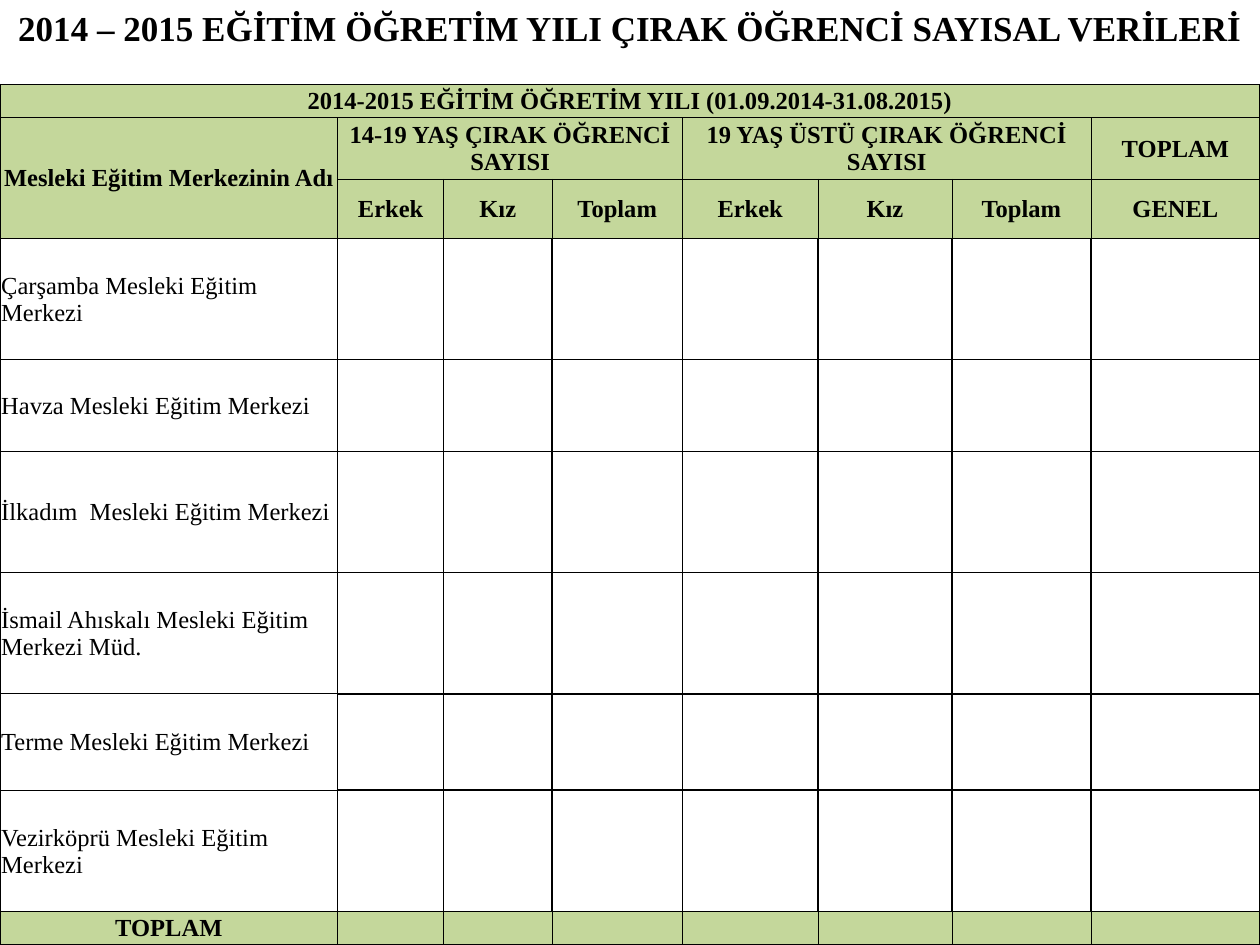
from lxml import etree
from pptx import Presentation
from pptx import util as u
from pptx.dml.color import RGBColor
from pptx.enum import text
from pptx.oxml import ns

BLACK = RGBColor(0x00, 0x00, 0x00)
GREEN = RGBColor(0xC4, 0xD7, 0x9B)
THIN, THICK = 0.5, 1

COLUMNS = [193, 60.5, 62, 74.5, 77.5, 76.5, 79.5, 96.5]
HEADER_HEIGHTS = [19, 35.3, 33.7]
CENTRES = [
    ("Çarşamba Mesleki Eğitim Merkezi", 69.3),
    ("Havza Mesleki Eğitim Merkezi", 52.5),
    ("İlkadım  Mesleki Eğitim Merkezi", 69.3),
    ("İsmail Ahıskalı Mesleki Eğitim Merkezi Müd.", 69.3),
    ("Terme Mesleki Eğitim Merkezi", 55),
    ("Vezirköprü Mesleki Eğitim Merkezi", 69.3),
]
TOTAL_HEIGHT = 18.7
GENDERS = ["Erkek", "Kız", "Toplam"]


def set_all(target, values):
    for name, value in values.items():
        setattr(target, name, value)


class Sheet:
    """Holds the text style and the current slide."""

    font_name = "Times New Roman"
    cell_size = 14
    cell_format = {
        "margin_left": u.Pt(0.7),
        "margin_right": u.Pt(0.7),
        "margin_top": u.Pt(0.7),
        "margin_bottom": 0,
        "vertical_anchor": text.MSO_ANCHOR.MIDDLE,
    }

    def __init__(self, page):
        self.page = page

    def label(self, para, words, size, bold, centred):
        if centred:
            para.alignment = text.PP_ALIGN.CENTER
        span = para.add_run()
        span.text = words
        set_all(span.font, {"name": self.font_name, "size": u.Pt(size), "bold": bold})
        span.font.color.rgb = BLACK

    def title(self, words, left, top, width, height):
        box = self.page.shapes.add_textbox(*map(u.Pt, (left, top, width, height)))
        box.text_frame.word_wrap = True
        self.label(box.text_frame.paragraphs[0], words, 20, True, True)

    def table(self, left, top, columns, rows):
        frame = self.page.shapes.add_table(
            len(rows), len(columns),
            *map(u.Pt, (left, top, sum(columns), sum(rows))))
        table = frame.table
        set_all(table, {"first_row": False, "horz_banding": False})
        for column, width in zip(table.columns, columns):
            column.width = u.Pt(width)
        for row, height in zip(table.rows, rows):
            row.height = u.Pt(height)
        return table

    def borders(self, cell, widths):
        props = cell._tc.get_or_add_tcPr()
        for index, (side, width) in enumerate(zip("LRTB", widths)):
            line = etree.Element(ns.qn(f"a:ln{side}"), w=str(u.Pt(width)))
            fill = etree.SubElement(line, ns.qn("a:solidFill"))
            etree.SubElement(fill, ns.qn("a:srgbClr"), val=str(BLACK))
            props.insert(index, line)

    def cell(self, cell, words, fill, widths, bold=True, centred=True):
        set_all(cell, self.cell_format)
        if fill is None:
            cell.fill.background()
        else:
            cell.fill.solid()
            cell.fill.fore_color.rgb = fill
        self.borders(cell, widths)
        para = cell.text_frame.paragraphs[0]
        if words:
            self.label(para, words, self.cell_size, bold, centred)
        else:
            # An empty cell keeps the row low only with a small end mark
            etree.SubElement(para._p, ns.qn("a:endParaRPr"),
                             sz=str(self.cell_size * 100))


def main():
    deck = Presentation()
    set_all(deck, {"slide_width": u.Pt(720), "slide_height": u.Pt(540)})
    sheet = Sheet(deck.slides.add_slide(deck.slide_layouts[6]))

    # Table grid
    heights = HEADER_HEIGHTS + [height for _, height in CENTRES] + [TOTAL_HEIGHT]
    table = sheet.table(0, 48.2, COLUMNS, heights)
    last_row, last_column = len(heights) - 1, len(COLUMNS) - 1

    # Merged header cells: first row and column, last row and column
    for top, left, bottom, right in [(0, 0, 0, last_column), (1, 0, 2, 0),
                                     (1, 1, 1, 3), (1, 4, 1, 6)]:
        table.cell(top, left).merge(table.cell(bottom, right))

    # Header and total rows
    green_rows = {
        0: ["2014-2015 EĞİTİM ÖĞRETİM YILI (01.09.2014-31.08.2015)"] + [""] * 7,
        1: ["Mesleki Eğitim Merkezinin Adı ",
            "14-19 YAŞ ÇIRAK ÖĞRENCİ SAYISI", "", "",
            "19 YAŞ ÜSTÜ ÇIRAK ÖĞRENCİ SAYISI", "", "", "TOPLAM"],
        2: [""] + GENDERS * 2 + ["GENEL"],
        last_row: ["TOPLAM"] + [""] * 7,
    }
    for row, labels in green_rows.items():
        for column, words in enumerate(labels):
            bottom = THICK if row == 2 and column else THIN
            sheet.cell(table.cell(row, column), words, GREEN,
                       (THIN, THIN, THIN, bottom))

    # One row for each centre, with empty counts
    for row, (name, _) in enumerate(CENTRES, len(HEADER_HEIGHTS)):
        sheet.cell(table.cell(row, 0), name, None, (THIN, THICK, THIN, THIN),
                   bold=False, centred=False)
        bottom = THIN if row == last_row - 1 else THICK
        for column in range(1, last_column + 1):
            sheet.cell(table.cell(row, column), "", None,
                       (THICK, THICK, THICK, bottom))

    # Title
    sheet.title("2014 – 2015 EĞİTİM ÖĞRETİM YILI ÇIRAK ÖĞRENCİ SAYISAL VERİLERİ",
                0, 0, 720, 31.5)

    deck.save("out.pptx")


if __name__ == "__main__":
    main()
